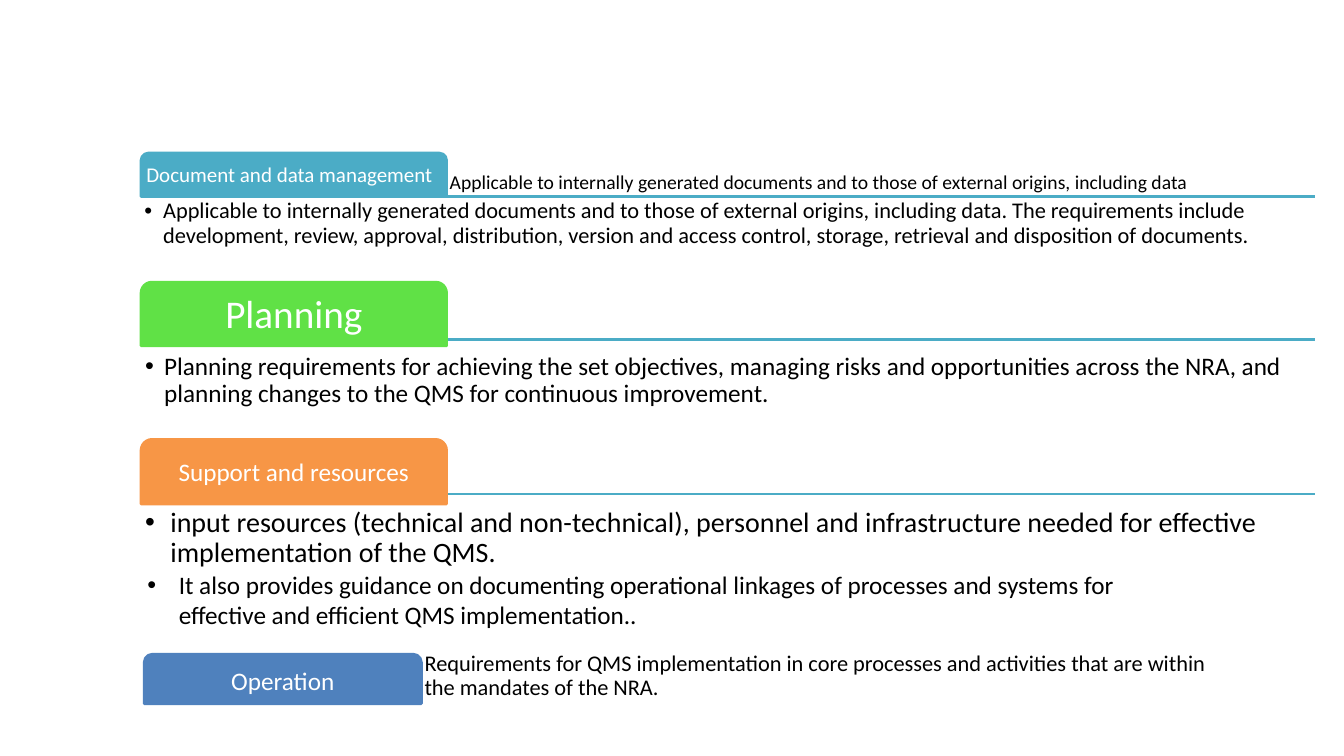
import pptx
import pptx.util
import pptx.dml.color
import pptx.enum.shapes
import pptx.enum.text
import pptx.oxml.ns
from lxml import etree

Pt = pptx.util.Pt
ALIGN = pptx.enum.text.PP_ALIGN
ANCHOR = pptx.enum.text.MSO_ANCHOR
SHAPE = pptx.enum.shapes.MSO_SHAPE
qn = pptx.oxml.ns.qn

THEME = dict(
    font="Calibri", text="000000", tab_text="FFFFFF", rule="4BACC6",
    document="4BACC6", planning="60E146", support="F79646", operation="4F81BD",
    caption=14, tab_small=15, small=16, body=18, lead=20, title=28, line=2,
)

LEFT, RIGHT, TAB_WIDTH = 100.8, 939.6, 218.2
WIDTH = RIGHT - LEFT
RULES = [352.8, 242.6, 140.4]

# label, box (left, top, width, height), fill, size, format
TABS = [
    ("Document and data management", (LEFT, 109.4, TAB_WIDTH, 31), "document", "tab_small",
     dict(align=ALIGN.LEFT, inset=2.25)),
    ("Planning", (LEFT, 201.6, TAB_WIDTH, 45.4), "planning", "title", dict(inset=4.3)),
    ("Support and resources", (LEFT, 313.9, TAB_WIDTH, 46.1), "support", "body", dict(inset=2.9)),
    ("Operation", (103, 467.3, 198, 35.3), "operation", "body", dict(inset=3.6, spacing=1)),
]

# text, box, size, format
TEXTS = [
    ("Applicable to internally generated documents and to those of external origins, including data",
     (LEFT + TAB_WIDTH, 109.4, WIDTH - TAB_WIDTH, 31), "caption", dict(anchor=ANCHOR.BOTTOM)),
    ("Applicable to internally generated documents and to those of external origins, including data. "
     "The requirements include development, review, approval, distribution, version and access control, "
     "storage, retrieval and disposition of documents.",
     (LEFT, 140.4, WIDTH, 62.6), "small", dict(indent=13.5)),
    ("Planning requirements for achieving the set objectives, managing risks and opportunities across "
     "the NRA, and planning changes to the QMS for continuous improvement.",
     (LEFT, 249.8, WIDTH, 62.6), "body", dict(indent=13.5, inset=2.9)),
    ("input resources (technical and non-technical), personnel and infrastructure needed for effective "
     "implementation of the QMS.",
     (LEFT, 360, WIDTH, 62.6), "lead", dict(indent=18, inset=2.9)),
    ("Requirements for QMS implementation in core processes and activities that are within the mandates "
     "of the NRA.",
     (301, 467.3, 563, 35.3), "small", dict(anchor=ANCHOR.BOTTOM)),
    ("It also provides guidance on documenting operational linkages of processes and systems for "
     "effective and efficient QMS implementation..",
     (103, 404.6, 761, 61.2), "body", dict(indent=22.5, spacing=1)),
]


def rgb(name):
    return pptx.dml.color.RGBColor.from_string(THEME[name])


def points(values):
    return [Pt(v) for v in values]


def write(sp, text, size, color="text", align=ALIGN.LEFT, anchor=ANCHOR.TOP,
          inset=2.25, spacing=0.9, indent=0):
    """Fill a shape with one paragraph; a positive indent makes it a bullet."""
    tf = sp.text_frame
    tf.word_wrap = True
    tf.vertical_anchor = anchor
    tf.margin_left = tf.margin_right = tf.margin_top = tf.margin_bottom = Pt(inset)
    p = tf.paragraphs[0]
    p.alignment, p.line_spacing = align, spacing
    r = p.add_run()
    r.text = text
    r.font.name, r.font.size = THEME["font"], Pt(THEME[size])
    r.font.color.rgb = rgb(color)
    if indent:
        props = p._p.get_or_add_pPr()
        props.set("marL", str(Pt(indent)))
        props.set("indent", str(-Pt(indent)))
        etree.SubElement(props, qn("a:buFont")).set("typeface", "Arial")
        etree.SubElement(props, qn("a:buChar")).set("char", "•")


def add_rule(s, y):
    line = s.shapes.add_connector(pptx.enum.shapes.MSO_CONNECTOR.STRAIGHT,
                                  *points((LEFT, y, RIGHT, y)))
    line.line.color.rgb = rgb("rule")
    line.line.width = Pt(THEME["line"])
    etree.SubElement(line._element.spPr, qn("a:effectLst"))


def add_tab(s, label, box, fill, size, style):
    sp = s.shapes.add_shape(SHAPE.ROUND_2_SAME_RECTANGLE, *points(box))
    sp.adjustments[0], sp.adjustments[1] = 0.17, 0
    sp.shadow.inherit = False
    sp.fill.solid()
    sp.fill.fore_color.rgb = sp.line.color.rgb = rgb(fill)
    sp.line.width = Pt(THEME["line"])
    write(sp, label, size, **{"color": "tab_text", "align": ALIGN.CENTER,
                              "anchor": ANCHOR.MIDDLE, **style})


def main():
    prs = pptx.Presentation()
    prs.slide_width, prs.slide_height = Pt(960), Pt(540)
    s = prs.slides.add_slide(prs.slide_layouts[6])
    for y in RULES:
        add_rule(s, y)
    for tab in TABS:
        add_tab(s, *tab)
    for text, box, size, style in TEXTS:
        write(s.shapes.add_textbox(*points(box)), text, size, **style)
    prs.save("out.pptx")


if __name__ == "__main__":
    main()
